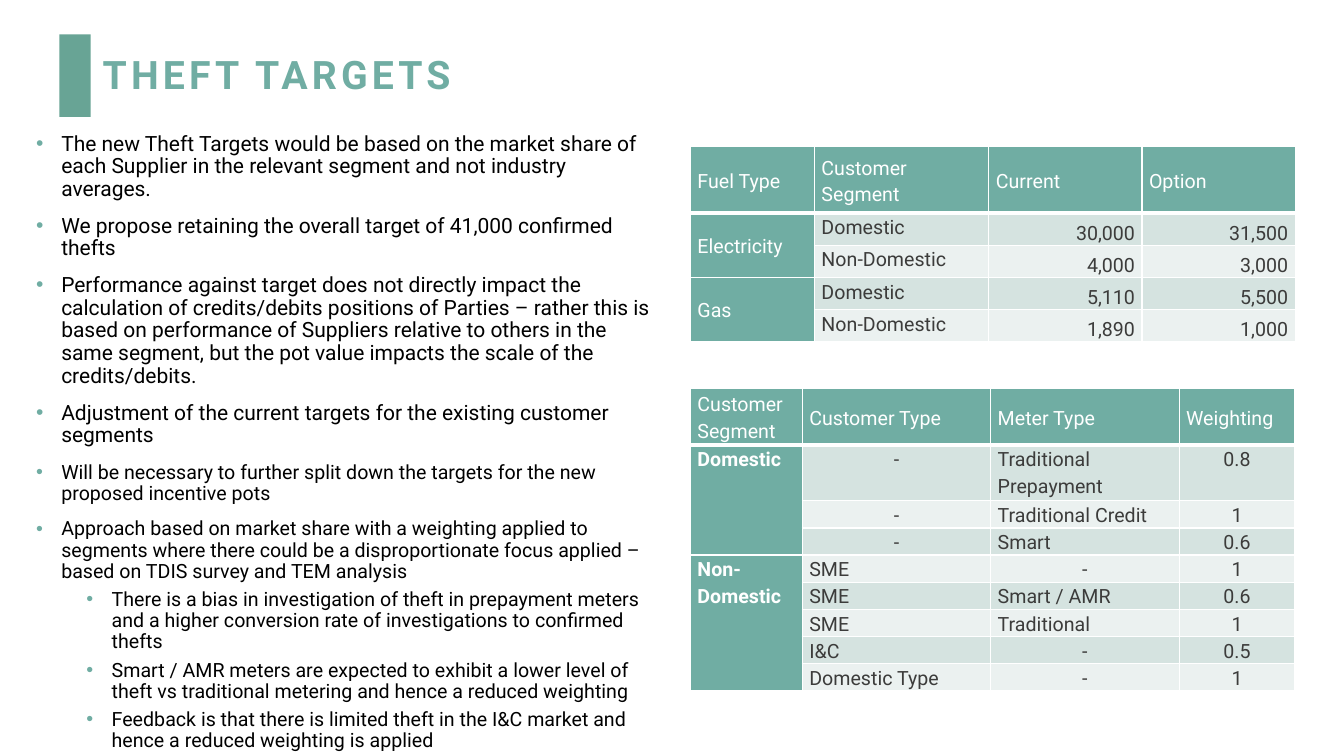
import pptx
import pptx.util
import pptx.dml.color
import pptx.enum.shapes
import pptx.enum.text
import pptx.oxml
import pptx.oxml.ns

Pt = pptx.util.Pt
Align = pptx.enum.text.PP_ALIGN
Anchor = pptx.enum.text.MSO_ANCHOR
NS = pptx.oxml.ns.nsdecls("a")
TEAL, WHITE, GREY = "70ADA3", "FFFFFF", "3C3C3B"
BANDS = ["EBF1F0", "D5E3E0"]


def hue(code):
    return pptx.dml.color.RGBColor.from_string(code)


def style(item, form):
    for name, value in form.items():
        setattr(item, name, value)


deck = pptx.Presentation()
style(deck, {"slide_width": Pt(960), "slide_height": Pt(540)})
slide = deck.slides.add_slide(deck.slide_layouts[5])

bar = slide.shapes.add_shape(
    pptx.enum.shapes.MSO_SHAPE.RECTANGLE, Pt(42.5), Pt(24.5), Pt(22.3), Pt(59))
bar.shadow.inherit = False
bar.fill.solid()
bar.fill.fore_color.rgb = hue("68A495")
bar.line.fill.background()

title = slide.shapes.title
style(title, {"left": Pt(66.2), "top": Pt(28.8), "width": Pt(730.8), "height": Pt(51.8)})
style(title.text_frame, {"auto_size": pptx.enum.text.MSO_AUTO_SIZE.NONE,
                         "vertical_anchor": Anchor.MIDDLE, "word_wrap": True})
para = title.text_frame.paragraphs[0]
style(para, {"alignment": Align.LEFT, "line_spacing": 0.9})
run = para.add_run()
run.text = "THEFT TARGETS"
style(run.font, {"name": "Roboto", "size": Pt(28), "bold": True})
run.font.color.rgb = hue(TEAL)
run.font._element.set("spc", "300")

notes = [
    (91.4, 175, 15, [
        (0, "The new Theft Targets would be based on the market share of each Supplier in the relevant segment and not industry averages."),
        (0, "We propose retaining the overall target of 41,000 confirmed thefts"),
        (0, "Performance against target does not directly impact the calculation of credits/debits positions of Parties – rather this is based on performance of Suppliers relative to others in the same segment, but the pot value impacts the scale of the credits/debits."),
        (0, "Adjustment of the current targets for the existing customer segments"),
    ]),
    (326.9, 203.8, 14, [
        (0, "Will be necessary to further split down the targets for the new proposed incentive pots"),
        (0, "Approach based on market share with a weighting applied to segments where there could be a disproportionate focus applied – based on TDIS survey and TEM analysis"),
        (1, "There is a bias in investigation of theft in prepayment meters and a higher conversion rate of investigations to confirmed thefts"),
        (1, "Smart / AMR meters are expected to exhibit a lower level of theft vs traditional metering and hence a reduced weighting"),
        (1, "Feedback is that there is limited theft in the I&C market and hence a reduced weighting is applied"),
    ]),
]
for top, high, size, lines in notes:
    frame = slide.shapes.add_textbox(Pt(18.72), Pt(top), Pt(460.8), Pt(high)).text_frame
    frame.word_wrap = True
    for spot, (level, text) in enumerate(lines):
        para = frame.add_paragraph() if spot else frame.paragraphs[0]
        form = {"level": level, "line_spacing": 0.9}
        if spot:
            form["space_before"] = Pt(5 if level else 10)
        style(para, form)
        props = para._p.get_or_add_pPr()
        props.set("marL", str(Pt(18 + 36 * level)))
        props.set("indent", str(Pt(-18)))
        for mark in (f'<a:buClr {NS}><a:srgbClr val="{TEAL}"/></a:buClr>',
                     f'<a:buFont {NS} typeface="Arial"/>',
                     f'<a:buChar {NS} char="•"/>'):
            props.append(pptx.oxml.parse_xml(mark))
        run = para.add_run()
        run.text = text
        style(run.font, {"name": "Roboto", "size": Pt(size)})
        run.font.color.rgb = hue("000000")

targets = [
    ["Fuel Type", "Customer Segment", "Current", "Option"],
    ["Electricity", "Domestic", "30,000", "31,500"],
    ["", "Non-Domestic", "4,000", "3,000"],
    ["Gas", "Domestic", "5,110", "5,500"],
    ["", "Non-Domestic", "1,890", "1,000"],
]
weights = [
    ["Customer Segment", "Customer Type", "Meter Type", "Weighting"],
    ["Domestic", "-", "Traditional Prepayment", "0.8"],
    ["", "-", "Traditional Credit", "1"],
    ["", "-", "Smart", "0.6"],
    ["Non-Domestic", "SME", "-", "1"],
    ["", "SME", "Smart / AMR", "0.6"],
    ["", "SME", "Traditional", "1"],
    ["", "I&C", "-", "0.5"],
    ["", "Domestic Type", "-", "1"],
]
grids = [
    (104.9, targets, [88.6, 124.6, 109.4, 109.4], [47.2] + [23] * 4,
     [(1, 2), (3, 4)], Align.RIGHT, Anchor.BOTTOM, Anchor.MIDDLE, False),
    (277.7, weights, [79.9, 134.6, 134.6, 82.8], [40] * 2 + [19.4] * 7,
     [(1, 3), (4, 8)], Align.CENTER, Anchor.TOP, Anchor.TOP, True),
]
for top, data, wides, highs, spans, side, base, lead, bold in grids:
    grid = slide.shapes.add_table(
        len(data), len(wides), Pt(493.2), Pt(top), Pt(sum(wides)), Pt(sum(highs))).table
    grid.horz_banding = False
    for col, wide in zip(grid.columns, wides):
        col.width = Pt(wide)
    for row, high in zip(grid.rows, highs):
        row.height = Pt(high)
    for i, texts in enumerate(data):
        for j, text in enumerate(texts):
            cell = grid.cell(i, j)
            head = i == 0 or j == 0
            value = not head and (text == "-" or text[0].isdigit())
            anchor = Anchor.MIDDLE if i == 0 else lead if j == 0 else base if value else Anchor.TOP
            style(cell, {"margin_left": Pt(5), "margin_right": Pt(5), "margin_top": 0,
                         "margin_bottom": 0, "vertical_anchor": anchor})
            for edge in "LRTB":
                thick = Pt(3 if i == 0 and edge == "B" else 1)
                cell._tc.get_or_add_tcPr().append(pptx.oxml.parse_xml(
                    f'<a:ln{edge} {NS} w="{thick}"><a:solidFill>'
                    f'<a:srgbClr val="{WHITE}"/></a:solidFill></a:ln{edge}>'))
            cell.fill.solid()
            cell.fill.fore_color.rgb = hue(TEAL if head else BANDS[i % 2])
            para = cell.text_frame.paragraphs[0]
            style(para, {"alignment": side if value else Align.LEFT, "line_spacing": 1.15})
            run = para.add_run()
            run.text = text
            style(run.font, {"name": "Roboto", "size": Pt(14), "bold": bold and j == 0 and i > 0})
            run.font.color.rgb = hue(WHITE if head else GREY)
    for first, last in spans:
        grid.cell(first, 0).merge(grid.cell(last, 0))

deck.save("out.pptx")
